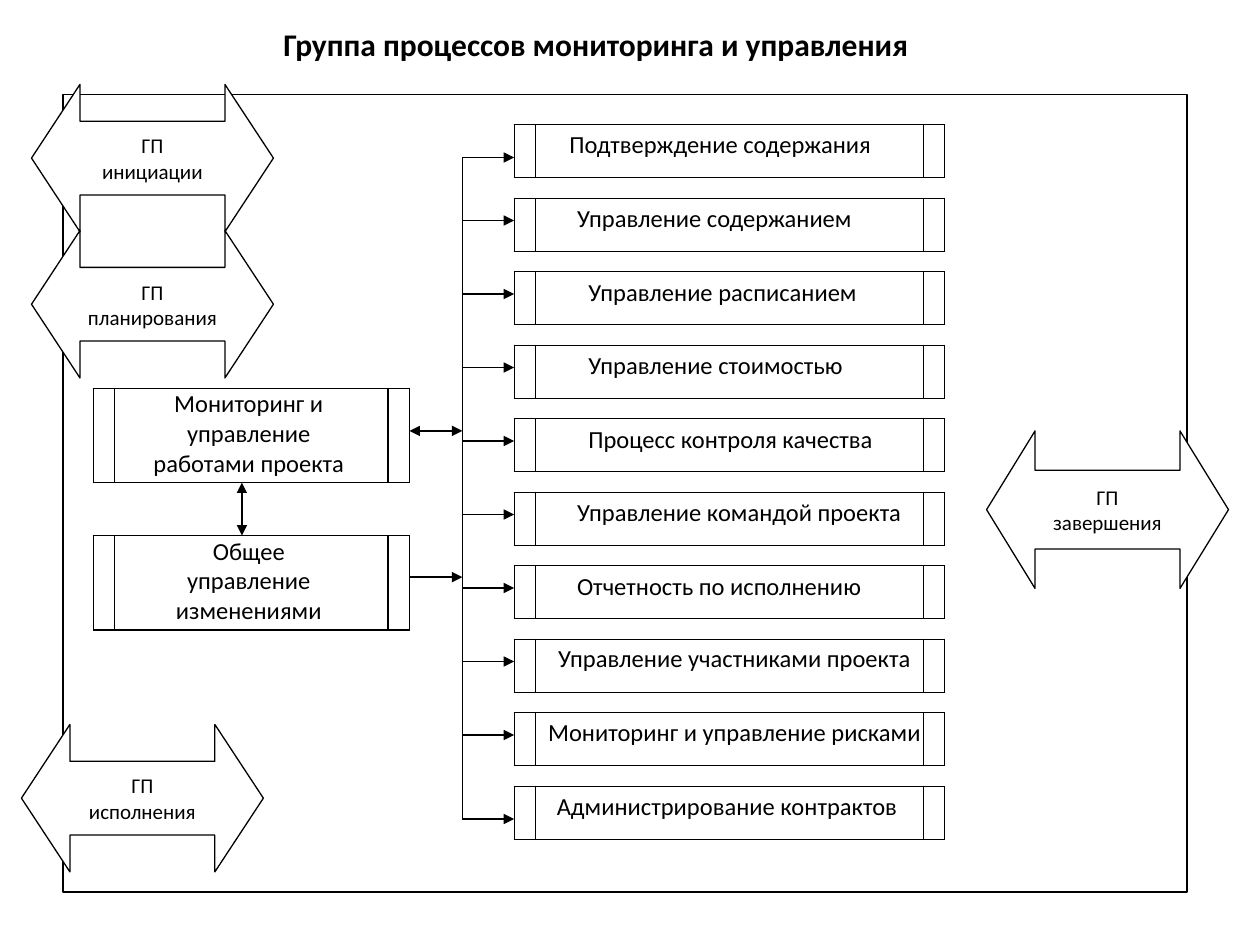
"""Builds the slide on the monitoring and control process group."""
from dataclasses import dataclass

from lxml import etree
from pptx import Presentation
from pptx import util as u
from pptx.dml.color import RGBColor
from pptx.enum import shapes, text
from pptx.oxml import ns


@dataclass(frozen=True)
class Theme:
    font: str = "Calibri"
    ink: RGBColor = RGBColor(0, 0, 0)
    paper: RGBColor = RGBColor(255, 255, 255)
    title_size: int = 18
    process_size: int = 14
    group_size: int = 12
    border: float = 0.75
    flow: float = 1


class Painter:
    def __init__(self, theme, page):
        self.theme = theme
        self.page = page

    def label(self, frame, wording, size, align, bold=False):
        frame.text = wording
        frame.word_wrap = True
        for para in frame.paragraphs:
            para.alignment = align
            for span in para.runs:
                span.font.name = self.theme.font
                span.font.size = u.Pt(size)
                span.font.bold = bold
                span.font.color.rgb = self.theme.ink

    def title(self, wording, left, top, width, height):
        box = self.page.shapes.add_textbox(*map(u.Inches, (left, top, width, height)))
        frame = box.text_frame
        frame.margin_left = frame.margin_right = frame.margin_bottom = 0
        frame.margin_top = u.Inches(0.01)
        self.label(frame, wording, self.theme.title_size, text.PP_ALIGN.LEFT, bold=True)

    def outline(self, shape):
        shape.shadow.inherit = False
        shape.line.color.rgb = self.theme.ink
        shape.line.width = u.Pt(self.theme.border)

    def frame(self, left, top, width, height):
        box = self.page.shapes.add_shape(
            shapes.MSO_SHAPE.RECTANGLE, *map(u.Inches, (left, top, width, height)))
        box.fill.background()
        self.outline(box)

    def group_arrow(self, wording, left, top, height):
        arrow = self.page.shapes.add_shape(
            shapes.MSO_SHAPE.LEFT_RIGHT_ARROW,
            *map(u.Inches, (left, top, 1.92, height)))
        arrow.adjustments[0] = 0.5
        arrow.adjustments[1] = 0.385 / height
        arrow.fill.solid()
        arrow.fill.fore_color.rgb = self.theme.paper
        self.outline(arrow)
        frame = arrow.text_frame
        frame.margin_left = frame.margin_right = 0
        frame.margin_top = frame.margin_bottom = 0
        frame.vertical_anchor = text.MSO_ANCHOR.MIDDLE
        self.label(frame, wording, self.theme.group_size, text.PP_ALIGN.CENTER)

    def cell_borders(self, cell):
        properties = cell._tc.get_or_add_tcPr()
        for position, side in enumerate(("a:lnL", "a:lnR", "a:lnT", "a:lnB")):
            line = etree.Element(ns.qn(side), w=str(u.Pt(self.theme.border)))
            fill = etree.SubElement(line, ns.qn("a:solidFill"))
            etree.SubElement(fill, ns.qn("a:srgbClr"), val=str(self.theme.ink))
            properties.insert(position, line)

    def process(self, wording, left, top, middle, height, margins, align):
        edge = 0.17
        widths = (edge, middle, edge)
        table = self.page.shapes.add_table(
            1, 3, *map(u.Inches, (left, top, sum(widths), height))).table
        table.first_row = table.horz_banding = False
        for column, width in zip(table.columns, widths):
            column.width = u.Inches(width)
        for cell in table.iter_cells():
            cell.margin_left = cell.margin_right = 0
            cell.margin_top = cell.margin_bottom = 0
            cell.fill.background()
            self.cell_borders(cell)
        cell = table.cell(0, 1)
        cell.margin_left, cell.margin_top, cell.margin_right = map(u.Inches, margins)
        self.label(cell.text_frame, wording, self.theme.process_size, align)

    def flow(self, start, end, heads=()):
        line = self.page.shapes.add_connector(
            shapes.MSO_CONNECTOR.STRAIGHT, *map(u.Inches, (*start, *end)))
        line.line.color.rgb = self.theme.ink
        line.line.width = u.Pt(self.theme.flow)
        properties = line._element.spPr
        for head in heads:
            etree.SubElement(properties.find(ns.qn("a:ln")), ns.qn(head), type="triangle")
        etree.SubElement(properties, ns.qn("a:effectLst"))


MAIN_PROCESSES = (
    ("Мониторинг и\nуправление работами проекта", 3.08),
    ("Общее\nуправление\nизменениями", 4.25),
)
PROCESSES = (
    ("Подтверждение содержания", 0.27, 0.04),
    ("Управление содержанием", 0.33, 0.05),
    ("Управление расписанием", 0.42, 0.05),
    ("Управление стоимостью", 0.42, 0.05),
    ("Процесс контроля качества", 0.42, 0.05),
    ("Управление командой проекта", 0.33, 0.05),
    ("Отчетность по исполнению", 0.33, 0.05),
    ("Управление участниками проекта", 0.18, 0.04),
    ("Мониторинг и управление рисками", 0.1, 0.04),
    ("Администрирование контрактов", 0.17, 0.05),
)
GROUPS = (
    ("ГП\nзавершения", 7.83, 3.42, 1.25),
    ("ГП\nпланирования", 0.25, 1.83, 1.17),
    ("ГП\nисполнения", 0.17, 5.75, 1.17),
    ("ГП\nинициации", 0.25, 0.67, 1.17),
)
TAIL, HEAD = "a:headEnd", "a:tailEnd"


def main():
    deck = Presentation()
    deck.slide_width, deck.slide_height = u.Inches(10), u.Inches(7.5)
    page = deck.slides.add_slide(deck.slide_layouts[6])
    painter = Painter(Theme(), page)

    painter.title("Группа процессов мониторинга и управления", 2.25, 0.19, 5.2, 0.33)
    painter.frame(0.5, 0.75, 8.92, 6.33)
    for wording, top in MAIN_PROCESSES:
        painter.process(wording, 0.74, top, 2.17, 0.75, (0.28, 0.01, 0.32),
                        text.PP_ALIGN.CENTER)

    spine, first, last, pitch = 3.67, 1.25, 6.5, 7 / 12
    painter.flow((spine, first), (spine, last))
    branches = [first, *(1.75 + row * pitch for row in range(8)), last]
    for row, (wording, indent, inset) in enumerate(PROCESSES):
        painter.process(wording, 4.08, 0.99 + row * pitch, 3.08, 0.42,
                        (indent, inset, 0), text.PP_ALIGN.LEFT)
        painter.flow((spine, branches[row]), (4.08, branches[row]), (HEAD,))
    painter.flow((3.25, 3.42), (spine, 3.42), (TAIL, HEAD))
    painter.flow((3.25, 4.58), (spine, 4.58), (HEAD,))
    painter.flow((1.92, 3.83), (1.92, 4.25), (TAIL, HEAD))

    for group in GROUPS:
        painter.group_arrow(*group)
    deck.save("out.pptx")


if __name__ == "__main__":
    main()
